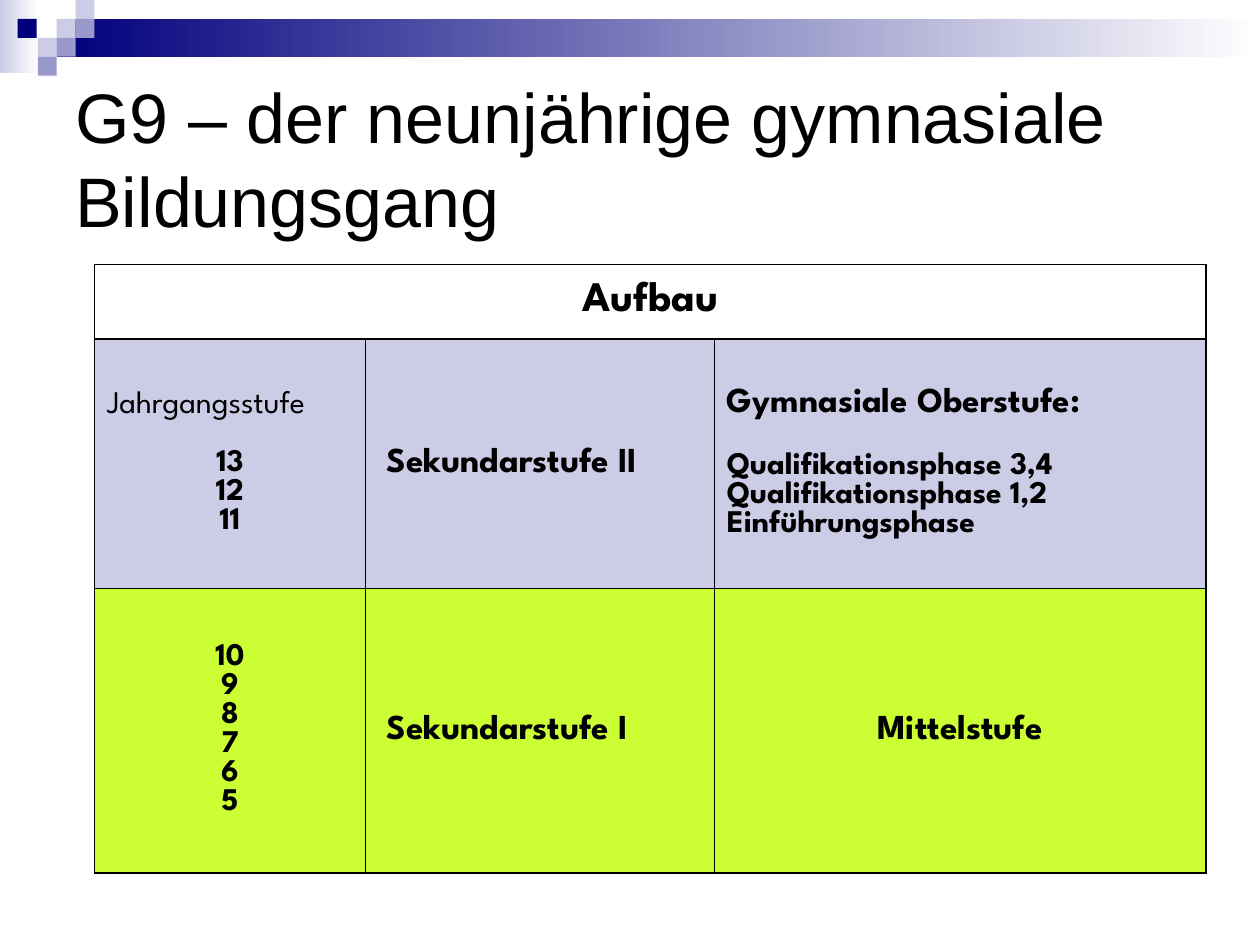
from dataclasses import dataclass
from typing import Optional

from lxml.etree import SubElement
from pptx import Presentation
from pptx.dml.color import RGBColor
from pptx.enum.shapes import MSO_SHAPE as Shape
from pptx.enum.text import MSO_ANCHOR as Anchor, PP_ALIGN as Align
from pptx.oxml import parse_xml
from pptx.oxml.ns import nsdecls, qn
from pptx.util import Inches, Pt


@dataclass(frozen=True)
class Theme:
    navy: str = "00007D"
    violet: str = "9999CC"
    lavender: str = "CCCCE6"
    lime: str = "CCFF33"
    white: str = "FFFFFF"
    black: str = "000000"
    title_font: str = "Arial"
    table_font: str = "League Spartan"
    title_size: int = 40
    header_size: int = 24
    stage_size: int = 20
    body_size: int = 18
    border_width: int = 1


THEME = Theme()


@dataclass(frozen=True)
class Line:
    text: str
    size: int = THEME.body_size
    bold: bool = True
    align: Align = Align.LEFT
    space_before: float = 0


@dataclass(frozen=True)
class Entry:
    lines: list[Line]
    fill: Optional[str] = None
    left_margin: float = 0.1


@dataclass(frozen=True)
class Block:
    left: float
    top: float
    width: float
    height: float
    color: str
    fades: bool = False


SQUARE = 0.15


def square(column: int, row: int, color: str) -> Block:
    return Block(column * SQUARE, row * SQUARE, SQUARE, SQUARE, color)


BANNER = [
    Block(0, 0, 0.31, 0.58, THEME.lavender, fades=True),
    Block(0.45, 0.15, 9.55, 0.3, THEME.navy, fades=True),
    square(3, 1, THEME.lavender),
    square(4, 0, THEME.lavender),
    square(4, 1, THEME.violet),
    square(2, 2, THEME.lavender),
    Block(0.14, SQUARE, SQUARE, SQUARE, THEME.navy),
    square(3, 2, THEME.violet),
    square(2, 3, THEME.violet),
]


def years(first: int, last: int, gap: float = 0) -> list[Line]:
    """Centred school years, counting down; gap goes above the first."""
    return [
        Line(str(year), align=Align.CENTER, space_before=gap if year == first else 0)
        for year in range(first, last - 1, -1)
    ]


def stage(name: str, fill: str) -> Entry:
    return Entry([Line(name, THEME.stage_size)], fill, left_margin=0.17)


COLUMN_WIDTHS = [2.15, 2.77, 3.9]
ROW_HEIGHTS = [0.59, 1.98, 2.26]
HEADER = Entry([Line("Aufbau", THEME.header_size, align=Align.CENTER)])
ROWS = [
    [HEADER, Entry([]), Entry([])],
    [
        Entry([Line("Jahrgangsstufe", bold=False), *years(13, 11, gap=16.5)], THEME.lavender),
        stage("Sekundarstufe II", THEME.lavender),
        Entry(
            [
                Line("Gymnasiale Oberstufe:", THEME.stage_size),
                Line("Qualifikationsphase 3,4", space_before=18.5),
                Line("Qualifikationsphase 1,2"),
                Line("Einführungsphase"),
            ],
            THEME.lavender,
        ),
    ],
    [
        Entry(years(10, 5), THEME.lime),
        stage("Sekundarstufe I", THEME.lime),
        Entry([Line("Mittelstufe", THEME.stage_size, align=Align.CENTER)], THEME.lime),
    ],
]


def rgb(color: str) -> RGBColor:
    return RGBColor.from_string(color)


def draw_block(page, block: Block) -> None:
    box = page.shapes.add_shape(
        Shape.RECTANGLE,
        Inches(block.left), Inches(block.top), Inches(block.width), Inches(block.height),
    )
    box.shadow.inherit = False
    box.line.fill.background()
    if block.fades:
        box.fill.gradient()
        box.fill.gradient_angle = 0
        for stop, color in zip(box.fill.gradient_stops, (block.color, THEME.white)):
            stop.color.rgb = rgb(color)
    else:
        box.fill.solid()
        box.fill.fore_color.rgb = rgb(block.color)


def write_lines(frame, lines: list[Line], font_name: str) -> None:
    for index, line in enumerate(lines):
        para = frame.add_paragraph() if index else frame.paragraphs[0]
        para.text = line.text
        para.alignment = line.align
        para.space_before = Pt(line.space_before)
        para.font.name = font_name
        para.font.size = Pt(line.size)
        para.font.bold = line.bold
        para.font.color.rgb = rgb(THEME.black)


def draw_title(page, text: str) -> None:
    box = page.shapes.add_textbox(Inches(0.5), Inches(0.5), Inches(9), Inches(1.5))
    frame = box.text_frame
    frame.word_wrap = True
    frame.vertical_anchor = Anchor.MIDDLE
    write_lines(frame, [Line(text, THEME.title_size, bold=False)], THEME.title_font)


def add_borders(cell) -> None:
    """Put the four edge lines ahead of the cell fill, as the schema asks."""
    properties = cell._tc.get_or_add_tcPr()
    for index, edge in enumerate(("lnL", "lnR", "lnT", "lnB")):
        line = parse_xml(f'<a:{edge} {nsdecls("a")} w="{Pt(THEME.border_width)}"/>')
        fill = SubElement(line, qn("a:solidFill"))
        SubElement(fill, qn("a:srgbClr"), val=THEME.black)
        properties.insert(index, line)


def fill_cell(cell, entry: Entry) -> None:
    cell.vertical_anchor = Anchor.MIDDLE
    cell.margin_left = Inches(entry.left_margin)
    if entry.fill:
        cell.fill.solid()
        cell.fill.fore_color.rgb = rgb(entry.fill)
    else:
        cell.fill.background()
    add_borders(cell)
    write_lines(cell.text_frame, entry.lines, THEME.table_font)


def draw_table(page) -> None:
    table = page.shapes.add_table(
        len(ROW_HEIGHTS), len(COLUMN_WIDTHS),
        Inches(0.75), Inches(2.1), Inches(sum(COLUMN_WIDTHS)), Inches(sum(ROW_HEIGHTS)),
    ).table
    for column, width in zip(table.columns, COLUMN_WIDTHS):
        column.width = Inches(width)
    for row, height, entries in zip(table.rows, ROW_HEIGHTS, ROWS):
        row.height = Inches(height)
        for cell, entry in zip(row.cells, entries):
            fill_cell(cell, entry)
    table.cell(0, 0).merge(table.cell(0, len(COLUMN_WIDTHS) - 1))


def main() -> None:
    deck = Presentation()
    deck.slide_width, deck.slide_height = Inches(10), Inches(7.5)
    page = deck.slides.add_slide(deck.slide_layouts[6])
    for block in BANNER:
        draw_block(page, block)
    draw_title(page, "G9 – der neunjährige gymnasiale Bildungsgang")
    draw_table(page)
    deck.save("out.pptx")


if __name__ == "__main__":
    main()
